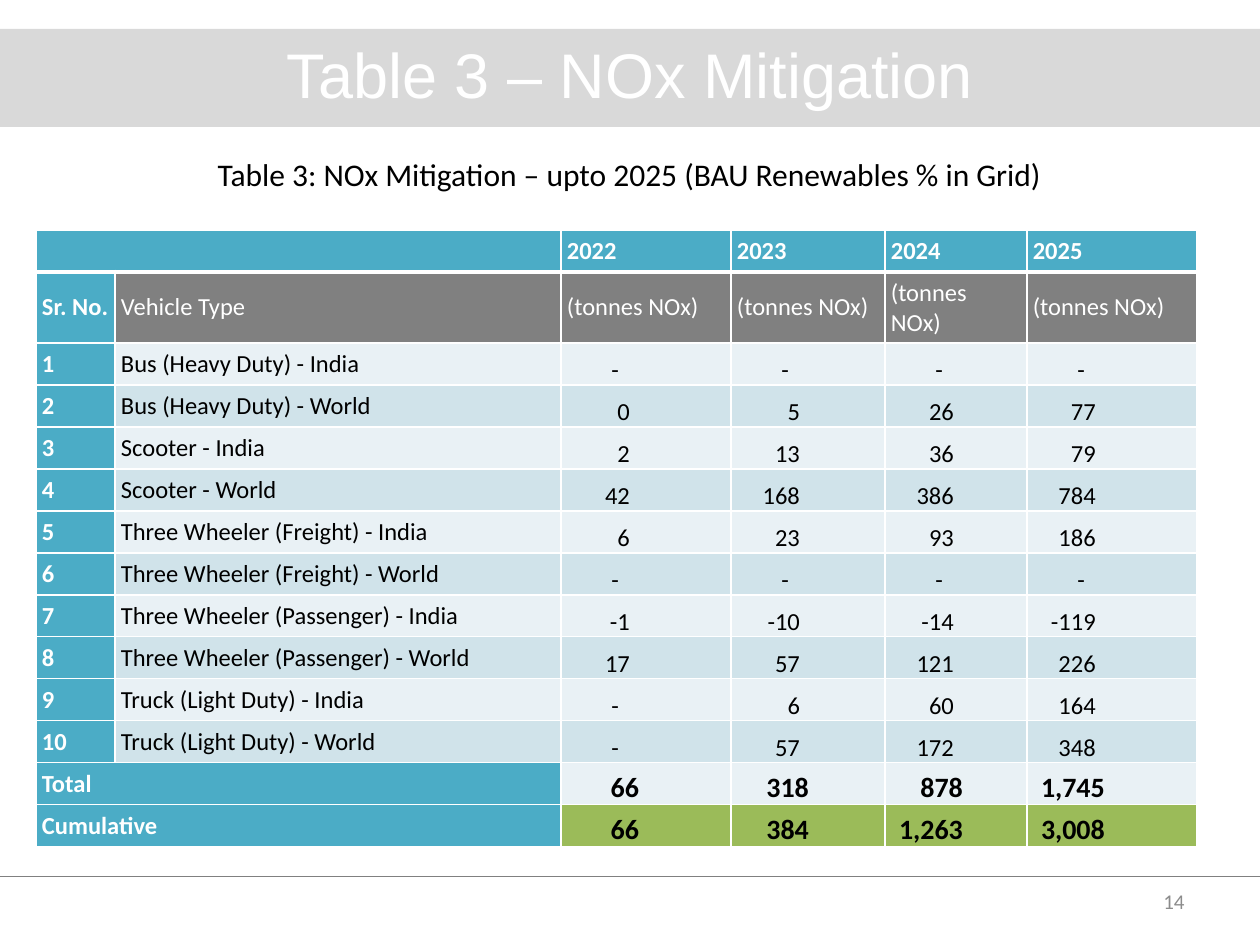
from typing import NamedTuple

from lxml.etree import SubElement
from pptx import Presentation
from pptx.dml.color import RGBColor
from pptx.enum.dml import MSO_LINE
from pptx.enum.shapes import MSO_CONNECTOR, MSO_SHAPE
from pptx.enum.text import MSO_ANCHOR, PP_ALIGN
from pptx.oxml.ns import qn
from pptx.util import Emu, Pt

PX = 914400 / 126
TEAL = RGBColor(0x4B, 0xAC, 0xC6)
PALE = RGBColor(0xE9, 0xF1, 0xF5)
PALE_BLUE = RGBColor(0xD0, 0xE3, 0xEA)
GREEN = RGBColor(0x9B, 0xBB, 0x59)
GRAY = RGBColor(0x80, 0x80, 0x80)
BAND_GRAY = RGBColor(0xD9, 0xD9, 0xD9)
NUMBER_GRAY = RGBColor(0x8C, 0x8C, 0x8C)
WHITE = RGBColor(0xFF, 0xFF, 0xFF)
BLACK = RGBColor(0, 0, 0)

YEARS = ("2022", "2023", "2024", "2025")
COLUMN_WIDTHS = (79, 446, 170, 154, 142, 170)
ROW_HEIGHT, UNIT_ROW_HEIGHT = 42, 71


class Vehicle(NamedTuple):
    name: str
    tonnes: tuple[str, ...]


class Summary(NamedTuple):
    name: str
    tonnes: tuple[str, ...]
    fill: RGBColor


VEHICLES = (
    Vehicle("Bus (Heavy Duty) - India", ("-", "-", "-", "-")),
    Vehicle("Bus (Heavy Duty) - World", ("0", "5", "26", "77")),
    Vehicle("Scooter - India", ("2", "13", "36", "79")),
    Vehicle("Scooter - World", ("42", "168", "386", "784")),
    Vehicle("Three Wheeler (Freight) - India", ("6", "23", "93", "186")),
    Vehicle("Three Wheeler (Freight) - World", ("-", "-", "-", "-")),
    Vehicle("Three Wheeler (Passenger) - India", ("-1", "-10", "-14", "-119")),
    Vehicle("Three Wheeler (Passenger) - World", ("17", "57", "121", "226")),
    Vehicle("Truck (Light Duty) - India", ("-", "6", "60", "164")),
    Vehicle("Truck (Light Duty) - World", ("-", "57", "172", "348")),
)
SUMMARIES = (
    Summary("Total", ("66", "318", "878", "1,745"), PALE),
    Summary("Cumulative", ("66", "384", "1,263", "3,008"), GREEN),
)


def px(length: int) -> Emu:
    return Emu(round(length * PX))


def box(left: int, top: int, width: int, height: int) -> tuple[Emu, ...]:
    return px(left), px(top), px(width), px(height)


def write(frame, text: str, *, size: int = 14, color: RGBColor = BLACK,
          font: str = "Calibri", bold: bool = False, align=PP_ALIGN.LEFT) -> None:
    paragraph = frame.paragraphs[0]
    paragraph.alignment = align
    if not text:
        SubElement(paragraph._p, qn("a:endParaRPr"), sz=str(size * 100))
        return
    run = paragraph.add_run()
    run.text = text
    run.font.size = Pt(size)
    run.font.name = font
    run.font.bold = bold
    run.font.color.rgb = color


def set_borders(cell, top: int = 1, bottom: int = 1) -> None:
    properties = cell._tc.get_or_add_tcPr()
    for side, points in (("L", 1), ("R", 1), ("T", top), ("B", bottom)):
        line = SubElement(properties, qn(f"a:ln{side}"), w=str(Pt(points)))
        fill = SubElement(line, qn("a:solidFill"))
        SubElement(fill, qn("a:srgbClr"), val=str(WHITE))


def style_cell(cell, fill: RGBColor, margins: tuple[int, ...], anchor, **borders: int) -> None:
    set_borders(cell, **borders)
    cell.fill.solid()
    cell.fill.fore_color.rgb = fill
    cell.vertical_anchor = anchor
    (cell.margin_left, cell.margin_top,
     cell.margin_right, cell.margin_bottom) = map(px, margins)


def label(cell, text: str, fill: RGBColor, *, color: RGBColor = WHITE,
          bold: bool = True, **borders: int) -> None:
    style_cell(cell, fill, (6, 6, 6, 6), MSO_ANCHOR.MIDDLE, **borders)
    write(cell.text_frame, text, color=color, bold=bold)


def figure(cell, text: str, width: int, fill: RGBColor, *, summary: bool = False) -> None:
    """Right-align a figure at a fixed distance from the cell's left side."""
    edge = 78 if summary else 58 if text == "-" else 69
    style_cell(cell, fill, (1, 1, width - edge, 0), MSO_ANCHOR.BOTTOM)
    write(cell.text_frame, text, size=16 if summary else 14,
          bold=summary, align=PP_ALIGN.RIGHT)


def add_mitigation_table(slide) -> None:
    rows = 2 + len(VEHICLES) + len(SUMMARIES)
    heights = [ROW_HEIGHT, UNIT_ROW_HEIGHT] + [ROW_HEIGHT] * (rows - 2)
    table = slide.shapes.add_table(
        rows, len(COLUMN_WIDTHS),
        *box(36, 230, sum(COLUMN_WIDTHS), sum(heights))).table
    for column, width in zip(table.columns, COLUMN_WIDTHS):
        column.width = px(width)
    for row, height in zip(table.rows, heights):
        row.height = px(height)

    # Year and unit headings
    for column in (0, 1):
        label(table.cell(0, column), "", TEAL, bottom=3)
    label(table.cell(1, 0), "Sr. No.", TEAL, top=3)
    label(table.cell(1, 1), "Vehicle Type", GRAY, bold=False, top=3)
    for column, year in enumerate(YEARS, start=2):
        label(table.cell(0, column), year, TEAL, bottom=3)
        label(table.cell(1, column), "(tonnes NOx)", GRAY, bold=False, top=3)

    # One row for each vehicle type
    for number, vehicle in enumerate(VEHICLES, start=1):
        row = number + 1
        fill = PALE if number % 2 else PALE_BLUE
        label(table.cell(row, 0), str(number), TEAL)
        label(table.cell(row, 1), vehicle.name, fill, color=BLACK, bold=False)
        for column, tonnes in enumerate(vehicle.tonnes, start=2):
            figure(table.cell(row, column), tonnes, COLUMN_WIDTHS[column], fill)

    # Total and cumulative rows
    for row, summary in enumerate(SUMMARIES, start=2 + len(VEHICLES)):
        label(table.cell(row, 0), summary.name, TEAL)
        label(table.cell(row, 1), "", TEAL)
        for column, tonnes in enumerate(summary.tonnes, start=2):
            figure(table.cell(row, column), tonnes, COLUMN_WIDTHS[column],
                   summary.fill, summary=True)

    for row in (0, rows - 2, rows - 1):
        table.cell(row, 0).merge(table.cell(row, 1))


def main() -> None:
    deck = Presentation()
    deck.slide_width, deck.slide_height = px(1260), px(945)
    slide = deck.slides.add_slide(deck.slide_layouts[5])
    shapes = slide.shapes

    # Title on its gray band, which goes behind everything
    band = shapes.add_shape(MSO_SHAPE.RECTANGLE, *box(0, 29, 1260, 98))
    band.shadow.inherit = False
    band.fill.solid()
    band.fill.fore_color.rgb = BAND_GRAY
    band.line.fill.background()
    shapes._spTree.insert(2, band._element)
    title = shapes.title
    title.left, title.top, title.width, title.height = box(0, 29, 1260, 88)
    title.text_frame.vertical_anchor = MSO_ANCHOR.MIDDLE
    write(title.text_frame, "Table 3 – NOx Mitigation", size=36, color=WHITE,
          font="Arial", align=PP_ALIGN.CENTER)

    # Footer rule and slide number
    rule = shapes.add_connector(MSO_CONNECTOR.STRAIGHT, px(0), px(876), px(1260), px(876))
    rule.line.color.rgb = GRAY
    rule.line.width = Pt(0.25)
    rule.line.dash_style = MSO_LINE.ROUND_DOT
    SubElement(rule._element.spPr, qn("a:effectLst"))
    slide_number = shapes.add_textbox(*box(903, 876, 294, 50)).text_frame
    slide_number.word_wrap = True
    slide_number.vertical_anchor = MSO_ANCHOR.MIDDLE
    write(slide_number, "14", size=12, color=NUMBER_GRAY, align=PP_ALIGN.RIGHT)

    # Caption and table
    caption = shapes.add_textbox(*box(4, 149, 1251, 50)).text_frame
    caption.word_wrap = True
    write(caption, "Table 3: NOx Mitigation – upto 2025 (BAU Renewables % in Grid)",
          size=18, align=PP_ALIGN.CENTER)
    add_mitigation_table(slide)

    deck.save("out.pptx")


if __name__ == "__main__":
    main()
